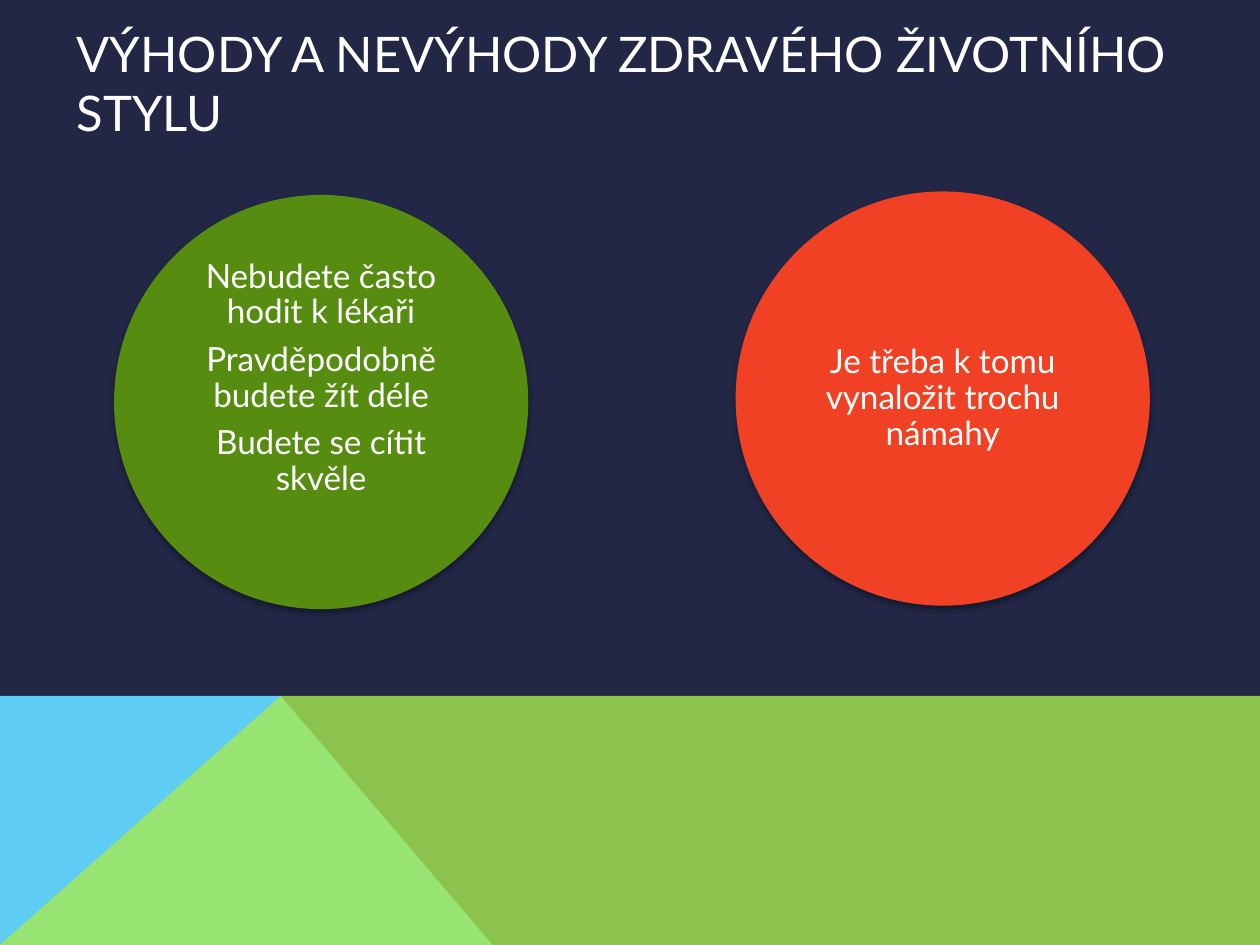
from dataclasses import dataclass

from lxml.etree import SubElement
from pptx import Presentation
from pptx.dml.color import RGBColor
from pptx.enum.shapes import MSO_SHAPE
from pptx.enum.text import MSO_ANCHOR, PP_ALIGN
from pptx.oxml.ns import qn
from pptx.util import Cm, Pt


@dataclass
class Theme:
    back: str = "212745"
    text: str = "FFFFFF"
    blue: str = "5ECCF3"
    lime: str = "A7EA52"
    green: str = "568D11"
    red: str = "F14124"
    font: str = "Lato"
    head: int = 28
    body: int = 19


def assign(item, form):
    for key, value in form.items():
        setattr(item, key, value)


class Deck:
    def __init__(self, theme, wide, high):
        self.theme = theme
        self.file = Presentation()
        assign(self.file, {"slide_width": Cm(wide), "slide_height": Cm(high)})
        self.slide = self.file.slides.add_slide(self.file.slide_layouts[6])
        self.paint(self.slide.background.fill, theme.back)

    def paint(self, fill, color, alpha=100):
        fill.solid()
        fill.fore_color.rgb = RGBColor.from_string(color)
        if alpha < 100:
            node = fill._xPr.find(".//" + qn("a:srgbClr"))
            SubElement(node, qn("a:alpha"), val=str(alpha * 1000))

    def plain(self, shape, color, alpha=100):
        self.paint(shape.fill, color, alpha)
        shape.line.fill.background()
        shape.shadow.inherit = False

    def label(self, frame, lines, size, form, para):
        assign(frame, {"word_wrap": True, "vertical_anchor": MSO_ANCHOR.MIDDLE, **form})
        for i, line in enumerate(lines):
            part = frame.add_paragraph() if i else frame.paragraphs[0]
            assign(part, para)
            run = part.add_run()
            run.text = line
            assign(run.font, {"name": self.theme.font, "size": Pt(size)})
            run.font.color.rgb = RGBColor.from_string(self.theme.text)

    def shade(self, shape):
        node = SubElement(shape._element.spPr.find(qn("a:effectLst")), qn("a:outerShdw"),
                          blurRad=str(Pt(3.1)), dist=str(Pt(1.8)), dir="5400000", rotWithShape="0")
        color = SubElement(node, qn("a:srgbClr"), val="000000")
        SubElement(color, qn("a:alpha"), val="35000")

    def facet(self, points, color, alpha=100):
        dots = [(Cm(x), Cm(y)) for x, y in points]
        pen = self.slide.shapes.build_freeform(*dots[0])
        pen.add_line_segments(dots[1:], close=True)
        self.plain(pen.convert_to_shape(), color, alpha)

    def title(self, text, x, y, w, h):
        box = self.slide.shapes.add_textbox(Cm(x), Cm(y), Cm(w), Cm(h))
        self.label(box.text_frame, [text], self.theme.head, {}, {})

    def disc(self, lines, x, y, size, color, lift=0):
        shape = self.slide.shapes.add_shape(MSO_SHAPE.OVAL, Cm(x), Cm(y), Cm(size), Cm(size))
        self.plain(shape, color)
        self.shade(shape)
        edge = {"margin_" + side: Cm(0.08) for side in ("left", "right", "top")}
        self.label(shape.text_frame, lines, self.theme.body,
                   {**edge, "margin_bottom": Cm(0.08 + lift)},
                   {"alignment": PP_ALIGN.CENTER, "line_spacing": 0.9, "space_after": Pt(6.5)})


def main():
    wide, high = 25.4, 19.05
    theme = Theme()
    deck = Deck(theme, wide, high)

    # Facets along the foot
    top, peak = 14.03, 5.66
    deck.facet([(0, high), (0, top), (peak, top), (9.93, high)], theme.blue)
    deck.facet([(0, high), (peak, top), (wide, top), (wide, high)], theme.lime, 80)

    # Title
    deck.title("VÝHODY A NEVÝHODY ZDRAVÉHO ŽIVOTNÍHO STYLU", 1.3, 0.91, 22.61, 1.52)

    # Pros and cons
    size = 8.35
    pros = ["Nebudete často hodit k lékaři", "Pravděpodobně budete žít déle",
            "Budete se cítit skvěle"]
    deck.disc(pros, 2.3, 3.93, size, theme.green, lift=0.95)
    deck.disc(["Je třeba k tomu vynaložit trochu námahy"], 14.83, 3.86, size, theme.red)

    deck.file.save("out.pptx")


if __name__ == "__main__":
    main()
